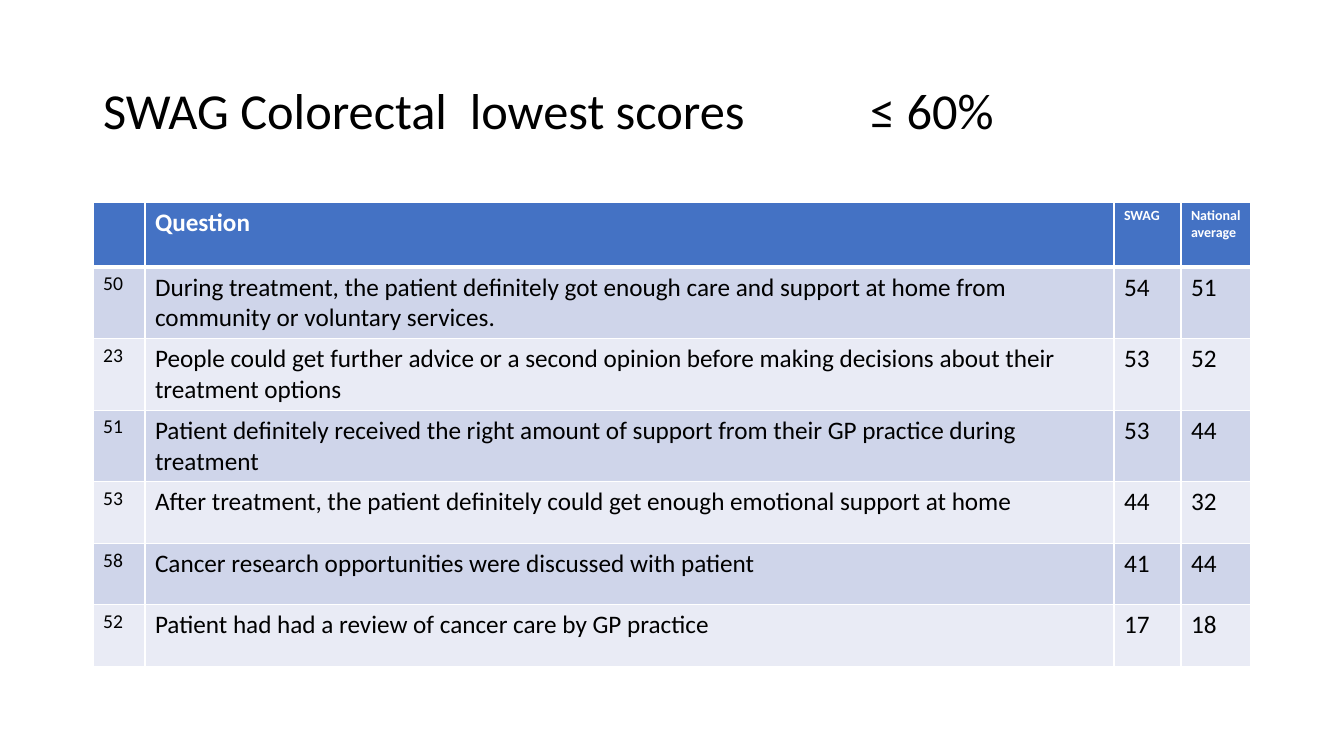
from dataclasses import dataclass

from lxml.etree import SubElement
from pptx import Presentation
from pptx.dml.color import RGBColor
from pptx.enum.text import MSO_ANCHOR, MSO_AUTO_SIZE, PP_ALIGN
from pptx.oxml.ns import qn
from pptx.util import Pt

# Content
TITLE = "SWAG Colorectal  lowest scores\t≤ 60%"
HEADER = ("", "Question", "SWAG", "National average")
SCORES = [
    ("50", "During treatment, the patient definitely got enough care and support "
           "at home from community or voluntary services.", "54", "51"),
    ("23", "People could get further advice or a second opinion before making "
           "decisions about their treatment options", "53", "52"),
    ("51", "Patient definitely received the right amount of support from their "
           "GP practice during treatment", "53", "44"),
    ("53", "After treatment, the patient definitely could get enough emotional "
           "support at home", "44", "32"),
    ("58", "Cancer research opportunities were discussed with patient", "41", "44"),
    ("52", "Patient had had a review of cancer care by GP practice", "17", "18"),
]

# Layout in px
PX = 914400 / 100.8
SLIDE_SIZE = (1344, 756)
TITLE_BOX = (93, 40, 1159, 146)
TITLE_TAB = 767
TABLE_LEFT, TABLE_TOP = 93, 202
COLUMN_WIDTHS = (52, 969, 67, 70)
HEADER_HEIGHT, BODY_HEIGHT = 65, 369


@dataclass(frozen=True)
class Theme:
    font: str = "Calibri"
    text: str = "000000"
    white: str = "FFFFFF"
    header: str = "4472C4"
    bands: tuple = ("CFD5EA", "E9EBF5")
    title_size: int = 36
    header_sizes: tuple = (18, 18, 10, 10)
    body_sizes: tuple = (14, 18, 18, 18)
    thin: int = 1
    thick: int = 3


THEME = Theme()


def px(length):
    return round(length * PX)


def write_text(text_frame, text, *, size, color=THEME.text, bold=False, line_spacing=None):
    paragraph = text_frame.paragraphs[0]
    paragraph.alignment = PP_ALIGN.LEFT
    paragraph.line_spacing = line_spacing
    run = paragraph.add_run()
    run.text = text
    run.font.name = THEME.font
    run.font.size = Pt(size)
    run.font.bold = bold
    run.font.color.rgb = RGBColor.from_string(color)
    return paragraph


def set_borders(cell, *, top, bottom):
    properties = cell._tc.get_or_add_tcPr()
    widths = {"a:lnL": THEME.thin, "a:lnR": THEME.thin, "a:lnT": top, "a:lnB": bottom}
    for tag, width in widths.items():
        line = SubElement(properties, qn(tag), w=str(Pt(width)))
        fill = SubElement(line, qn("a:solidFill"))
        SubElement(fill, qn("a:srgbClr"), val=THEME.white)


def add_title(slide):
    title = slide.shapes.title
    title.left, title.top, title.width, title.height = map(px, TITLE_BOX)
    text_frame = title.text_frame
    text_frame.vertical_anchor = MSO_ANCHOR.MIDDLE
    text_frame.auto_size = MSO_AUTO_SIZE.NONE
    paragraph = write_text(text_frame, TITLE, size=THEME.title_size, line_spacing=0.9)
    # The tab stop sets the threshold apart
    tabs = SubElement(paragraph._p.get_or_add_pPr(), qn("a:tabLst"))
    SubElement(tabs, qn("a:tab"), pos=str(px(TITLE_TAB)), algn="l")


def add_score_table(slide):
    rows = [HEADER, *SCORES]
    table = slide.shapes.add_table(
        len(rows), len(HEADER), px(TABLE_LEFT), px(TABLE_TOP),
        px(sum(COLUMN_WIDTHS)), px(HEADER_HEIGHT + BODY_HEIGHT)).table
    for column, width in zip(table.columns, COLUMN_WIDTHS):
        column.width = px(width)

    for row_index, row in enumerate(rows):
        is_header = row_index == 0
        table.rows[row_index].height = px(
            HEADER_HEIGHT if is_header else BODY_HEIGHT / len(SCORES))
        fill = THEME.header if is_header else THEME.bands[(row_index - 1) % 2]
        sizes = THEME.header_sizes if is_header else THEME.body_sizes
        for column_index, text in enumerate(row):
            cell = table.cell(row_index, column_index)
            set_borders(cell, top=THEME.thick if row_index == 1 else THEME.thin,
                        bottom=THEME.thick if is_header else THEME.thin)
            cell.fill.solid()
            cell.fill.fore_color.rgb = RGBColor.from_string(fill)
            if text:
                write_text(cell.text_frame, text, size=sizes[column_index], bold=is_header,
                           color=THEME.white if is_header else THEME.text)


def main():
    presentation = Presentation()
    presentation.slide_width, presentation.slide_height = map(px, SLIDE_SIZE)
    title_only = presentation.slide_layouts[5]
    slide = presentation.slides.add_slide(title_only)
    add_title(slide)
    add_score_table(slide)
    presentation.save("out.pptx")


if __name__ == "__main__":
    main()
